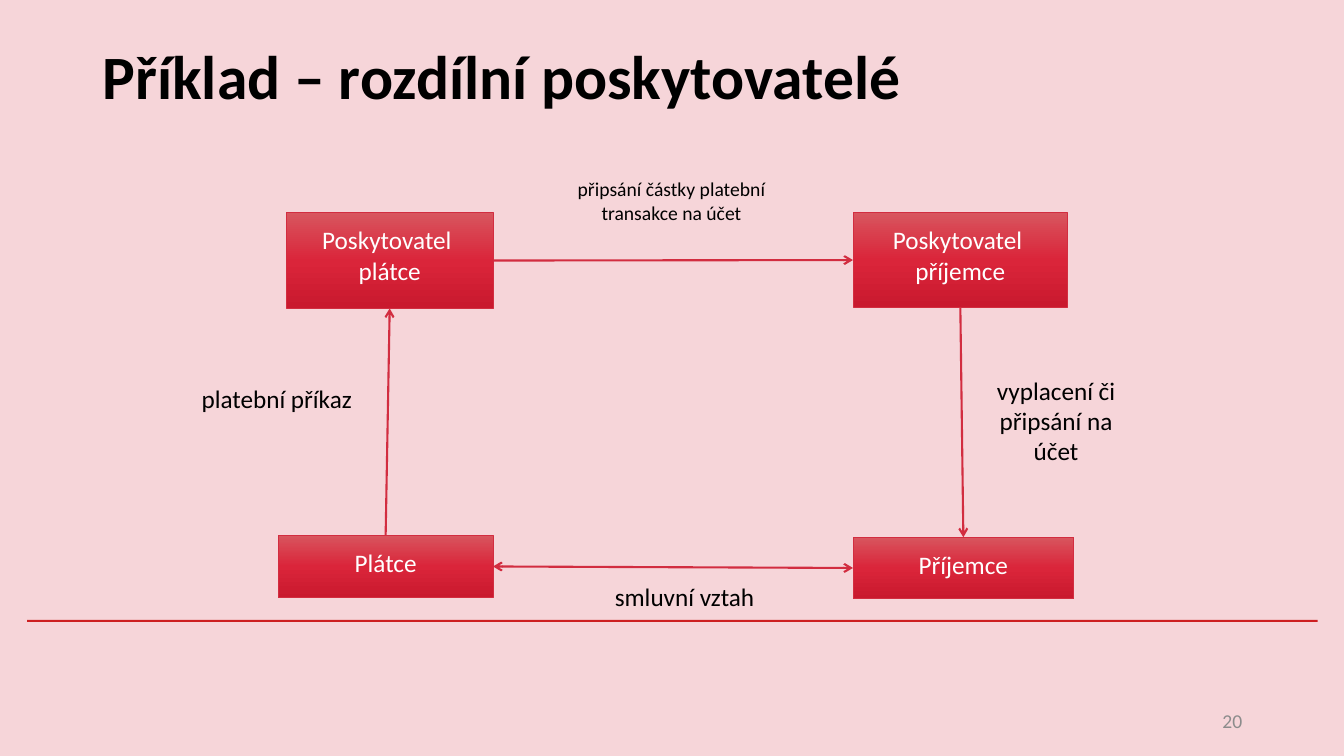
from copy import deepcopy

from lxml import etree
from pptx import Presentation
from pptx.dml.color import RGBColor
from pptx.enum import shapes, text
from pptx.oxml.ns import qn
from pptx.util import Inches, Pt

RED = "D22D40"
GRADIENT = [(0, "D8555E"), (0.5, "DA253A"), (1, "C9192E")]
TOP, LEFT, BOTTOM, RIGHT = range(4)  # connection sites of a rectangle
CENTER = text.PP_ALIGN.CENTER
MIDDLE = text.MSO_ANCHOR.MIDDLE


def rgb(value):
    return RGBColor.from_string(value)


def write(box, lines, size, color, align=CENTER, anchor=text.MSO_ANCHOR.TOP, bold=False):
    """Fill a box with one formatted paragraph per line."""
    frame = box.text_frame
    frame.word_wrap = True
    frame.vertical_anchor = anchor
    for index, line in enumerate(lines):
        para = frame.add_paragraph() if index else frame.paragraphs[0]
        para.alignment = align
        span = para.add_run()
        span.text = line
        span.font.name = "Calibri"
        span.font.size = Pt(size)
        span.font.bold = bold
        span.font.color.rgb = rgb(color)


deck = Presentation()
deck.slide_width = Inches(13.33)
deck.slide_height = Inches(7.5)
page = deck.slides.add_slide(deck.slide_layouts[6])
page.background.fill.solid()
page.background.fill.fore_color.rgb = rgb("F6D5D9")

# Footer rule, title and page number
rule = page.shapes.add_shape(shapes.MSO_SHAPE.RECTANGLE, Inches(0.27), Inches(6.15),
                             Inches(12.8), Inches(0.02))
rule.shadow.inherit = False
rule.fill.solid()
rule.fill.fore_color.rgb = rgb("CD1F21")
rule.line.fill.background()

title = page.shapes.add_textbox(Inches(0.92), Inches(0.02), Inches(11.5), Inches(1.45))
write(title, ["Příklad – rozdílní poskytovatelé"], 44, "000000",
      text.PP_ALIGN.LEFT, MIDDLE, bold=True)
number = page.shapes.add_textbox(Inches(9.42), Inches(6.95), Inches(3), Inches(0.4))
write(number, ["20"], 14, "8C8C8C", text.PP_ALIGN.RIGHT, MIDDLE)

# Parties to the payment
parties = {}
for name, lines, left, top, width, height in [
    ("payer bank", ["Poskytovatel ", "plátce"], 2.84, 2.11, 2.05, 0.95),
    ("payee bank", ["Poskytovatel ", "příjemce"], 8.46, 2.11, 2.13, 0.94),
    ("payee", ["Příjemce"], 8.46, 5.33, 2.19, 0.61),
    ("payer", ["Plátce"], 2.76, 5.31, 2.13, 0.62),
]:
    box = page.shapes.add_shape(shapes.MSO_SHAPE.RECTANGLE, Inches(left), Inches(top),
                                Inches(width), Inches(height))
    box.shadow.inherit = False
    box.fill.gradient()
    box.fill.gradient_angle = 270
    first_stop = box._element.spPr.find(".//" + qn("a:gs"))
    first_stop.addnext(deepcopy(first_stop))
    for stop, (position, color) in zip(box.fill.gradient_stops, GRADIENT):
        stop.position = position
        stop.color.rgb = rgb(color)
    box.line.color.rgb = rgb(RED)
    box.line.width = Pt(0.5)
    box.text_frame.margin_top = box.text_frame.margin_bottom = Inches(0.12)
    write(box, lines, 18, "FFFFFF")
    parties[name] = box

# Labels beside the arrows
for label, size, left, top, width, height in [
    ("smluvní vztah", 18, 5.41, 5.72, 2.76, 0.4),
    ("platební příkaz", 18, 1.9, 3.75, 1.69, 0.78),
    ("připsání částky platební transakce na účet", 14, 5.49, 1.71, 2.34, 0.62),
    ("vyplacení či připsání na účet", 18, 9.71, 3.67, 1.53, 1),
]:
    box = page.shapes.add_textbox(Inches(left), Inches(top), Inches(width), Inches(height))
    write(box, [label], size, "000000")

# Arrows from party to party
for source, source_site, target, target_site, ends in [
    ("payer bank", RIGHT, "payee bank", LEFT, ["a:tailEnd"]),
    ("payer", TOP, "payer bank", BOTTOM, ["a:tailEnd"]),
    ("payer", RIGHT, "payee", LEFT, ["a:headEnd", "a:tailEnd"]),
    ("payee bank", BOTTOM, "payee", TOP, ["a:tailEnd"]),
]:
    arrow = page.shapes.add_connector(shapes.MSO_CONNECTOR.STRAIGHT, 0, 0, 0, 0)
    arrow.begin_connect(parties[source], source_site)
    arrow.end_connect(parties[target], target_site)
    arrow.line.color.rgb = rgb(RED)
    arrow.line.width = Pt(1.5)
    for end in ends:
        etree.SubElement(arrow.line._get_or_add_ln(), qn(end), type="arrow")
    etree.SubElement(arrow._element.spPr, qn("a:effectLst"))

deck.save("out.pptx")
